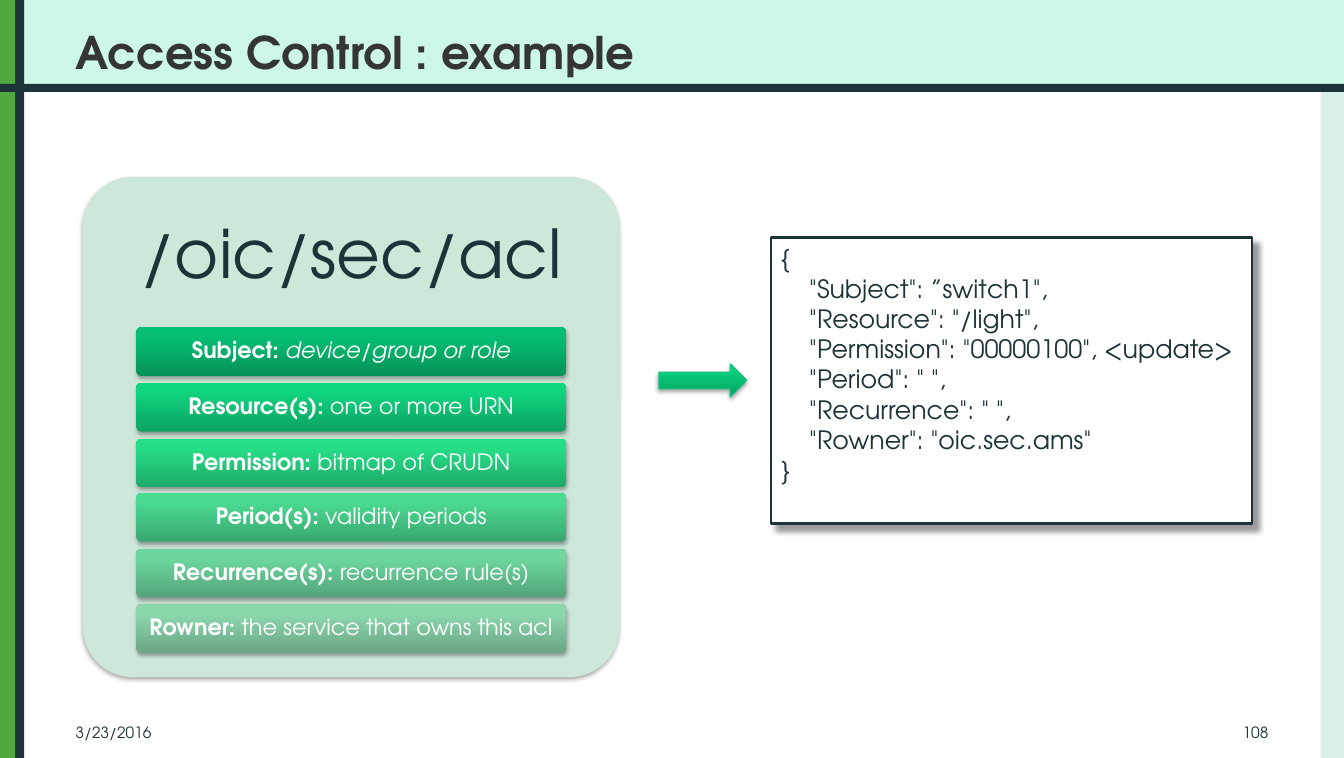
import copy

import pptx
import pptx.dml.color
import pptx.enum.shapes
import pptx.enum.text
import pptx.oxml
import pptx.oxml.ns
import pptx.util

RGB = pptx.dml.color.RGBColor
SHAPES = pptx.enum.shapes.MSO_SHAPE
ALIGN = pptx.enum.text.PP_ALIGN
ANCHOR = pptx.enum.text.MSO_ANCHOR

PX = 9144  # 100 px to the inch
SLIDE_W, SLIDE_H = 1330, 750
FONT = "TeX Gyre Adventor"

NAVY = RGB(0x1C, 0x33, 0x39)
CHARCOAL = RGB(0x34, 0x35, 0x34)
WHITE = RGB(0xFF, 0xFF, 0xFF)
GREEN = RGB(0x50, 0xA8, 0x3E)
MINT = RGB(0xCD, 0xF7, 0xE6)
PALE_MINT = RGB(0xDB, 0xEF, 0xE9)
PANEL_GREEN = RGB(0xCD, 0xE8, 0xD8)
ARROW_EDGE = RGB(0x1A, 0xBF, 0x7C)
ARROW_SHADES = (RGB(0x05, 0xA0, 0x61), RGB(0x07, 0xD0, 0x7E), RGB(0x03, 0xD5, 0x80))

# bold label, description, italic description, gradient shades from the bottom up
ACL_FIELDS = [
    ("Subject: ", "device/group or role", True,
     (RGB(0x05, 0x92, 0x58), RGB(0x06, 0xBD, 0x73), RGB(0x03, 0xC1, 0x74))),
    ("Resource(s):", " one or more URN", False,
     (RGB(0x0C, 0xA2, 0x61), RGB(0x10, 0xD3, 0x7E), RGB(0x0D, 0xD8, 0x7F))),
    ("Permission: ", "bitmap of CRUDN", False,
     (RGB(0x1D, 0xAA, 0x68), RGB(0x26, 0xDD, 0x87), RGB(0x23, 0xE1, 0x88))),
    ("Period(s): ", "validity periods", False,
     (RGB(0x39, 0xA7, 0x70), RGB(0x4A, 0xD8, 0x91), RGB(0x48, 0xDC, 0x92))),
    ("Recurrence(s): ", "recurrence rule(s)", False,
     (RGB(0x53, 0xA5, 0x7A), RGB(0x6C, 0xD6, 0x9E), RGB(0x6B, 0xD9, 0x9F))),
    ("Rowner: ", "the service that owns this acl", False,
     (RGB(0x6B, 0xA5, 0x85), RGB(0x8B, 0xD7, 0xAC), RGB(0x8B, 0xD9, 0xAD))),
]
POLICY_LINES = [
    "{",
    "\"Subject\": ”switch1\",",
    "\"Resource\": \"/light\",",
    "\"Permission\": \"00000100\", <update>",
    "\"Period\": \" \",",
    "\"Recurrence\": \" \",",
    "\"Rowner\": \"oic.sec.ams\"",
    "}",
]
# opacity in percent, blur and distance in points, direction in degrees
SOFT_SHADOW = (35, 3.1, 1.8, 90)
DEEP_SHADOW = (40, 4, 6, 45)


def emu(box):
    return [round(length * PX) for length in box]


def paint_gradient(fill, shape, shades):
    fill.gradient()
    fill.gradient_angle = 90
    stop_list = shape._element.spPr.find(".//" + pptx.oxml.ns.qn("a:gsLst"))
    stop_list.append(copy.deepcopy(stop_list[0]))
    for stop, position, shade in zip(fill.gradient_stops, (0, 0.8, 1), shades):
        stop.position = position
        stop.color.rgb = shade


def cast_shadow(shape, opacity, blur, distance, direction):
    effects = shape._element.spPr.find(pptx.oxml.ns.qn("a:effectLst"))
    effects.append(pptx.oxml.parse_xml(
        f'<a:outerShdw {pptx.oxml.ns.nsdecls("a")} blurRad="{round(blur * 12700)}" '
        f'dist="{round(distance * 12700)}" dir="{direction * 60000}" rotWithShape="0">'
        f'<a:srgbClr val="000000"><a:alpha val="{opacity * 1000}"/></a:srgbClr>'
        f'</a:outerShdw>'))


def add_block(slide, kind, box, paint, edge=None, shadow=None):
    """Add a preset shape; paint is one colour or three gradient shades."""
    shape = slide.shapes.add_shape(kind, *emu(box))
    if isinstance(paint, RGB):
        shape.fill.solid()
        shape.fill.fore_color.rgb = paint
    else:
        paint_gradient(shape.fill, shape, paint)
    if edge:
        shape.line.color.rgb, shape.line.width = edge
    else:
        shape.line.fill.background()
    shape.shadow.inherit = False
    if shadow:
        cast_shadow(shape, *shadow)
    return shape


def set_frame(shape, anchor, insets=(10, 5)):
    frame = shape.text_frame
    side, end = emu(insets)
    settings = {"word_wrap": True, "vertical_anchor": anchor,
                "margin_left": side, "margin_right": side,
                "margin_top": end, "margin_bottom": end}
    for name, value in settings.items():
        setattr(frame, name, value)
    return frame


def add_run(paragraph, text, size, color, bold=False, italic=False):
    run = paragraph.add_run()
    run.text = text
    settings = {"name": FONT, "size": pptx.util.Pt(size), "bold": bold, "italic": italic}
    for name, value in settings.items():
        setattr(run.font, name, value)
    run.font.color.rgb = color


def add_label(slide, box, text, size, color=NAVY, align=ALIGN.LEFT,
              anchor=ANCHOR.MIDDLE, bold=False):
    label = slide.shapes.add_textbox(*emu(box))
    paragraph = set_frame(label, anchor).paragraphs[0]
    paragraph.alignment = align
    add_run(paragraph, text, size, color, bold)


def draw_backdrop(slide, left, top, width, height):
    band, rule = 83, 8
    for box, color in [
        ((left + 22, top, width - 22, band), MINT),
        ((left + 7, top, 17, height), NAVY),
        ((left, top, 15, height), GREEN),
        ((left + width - 23, top + band, 23, height - band), PALE_MINT),
        ((left, top + band, width, rule), NAVY),
    ]:
        add_block(slide, SHAPES.RECTANGLE, box, color)


def draw_header_and_footer(slide, left, top, width, height):
    add_label(slide, (left, top, width, 75), "Access Control : example", 32,
              CHARCOAL, anchor=ANCHOR.BOTTOM, bold=True)
    footer_top = top + height - 33
    add_label(slide, (left, footer_top, 150, 33), "3/23/2016", 11)
    add_label(slide, (left + width - 150, footer_top, 150, 33), "108", 11,
              align=ALIGN.RIGHT)


def draw_acl_panel(slide, left, top, width, height):
    panel = add_block(slide, SHAPES.ROUNDED_RECTANGLE, (left, top, width, height),
                      PANEL_GREEN, shadow=SOFT_SHADOW)
    panel.adjustments[0] = 0.1
    add_label(slide, (left, top, width, 148), "/oic/sec/acl", 48, align=ALIGN.CENTER)

    margin, bar_height = 53, 48
    first_top = top + 149
    pitch = (height - 149 - 24 - bar_height) / (len(ACL_FIELDS) - 1)
    for row, (name, meaning, italic, shades) in enumerate(ACL_FIELDS):
        box = (left + margin, round(first_top + row * pitch),
               width - 2 * margin, bar_height)
        bar = add_block(slide, SHAPES.ROUNDED_RECTANGLE, box, shades, shadow=SOFT_SHADOW)
        bar.adjustments[0] = 0.1
        paragraph = set_frame(bar, ANCHOR.MIDDLE, (4, 3)).paragraphs[0]
        paragraph.alignment = ALIGN.CENTER
        paragraph.line_spacing = 0.9
        add_run(paragraph, name, 16, WHITE, bold=True)
        add_run(paragraph, meaning, 16, WHITE, italic=italic)


def draw_policy(slide, left, top, width, height):
    policy = add_block(slide, SHAPES.RECTANGLE, (left, top, width, height), WHITE,
                       (NAVY, pptx.util.Pt(2)), DEEP_SHADOW)
    frame = set_frame(policy, ANCHOR.TOP)
    for number, line in enumerate(POLICY_LINES):
        paragraph = frame.add_paragraph() if number else frame.paragraphs[0]
        paragraph.alignment = ALIGN.LEFT
        if line not in "{}":
            paragraph._p.get_or_add_pPr().set("marL", str(28 * PX))
        add_run(paragraph, line, 18, NAVY)


def main():
    deck = pptx.Presentation()
    deck.slide_width, deck.slide_height = emu((SLIDE_W, SLIDE_H))
    slide = deck.slides.add_slide(deck.slide_layouts[6])
    draw_backdrop(slide, 0, 0, SLIDE_W, SLIDE_H)
    draw_header_and_footer(slide, 65, 8, 1200, 733)
    draw_acl_panel(slide, 82, 175, 531, 495)
    draw_policy(slide, 763, 235, 476, 283)
    add_block(slide, SHAPES.RIGHT_ARROW, (652, 360, 87, 33), ARROW_SHADES,
              (ARROW_EDGE, pptx.util.Pt(0.75)), SOFT_SHADOW)
    deck.save("out.pptx")


if __name__ == "__main__":
    main()
